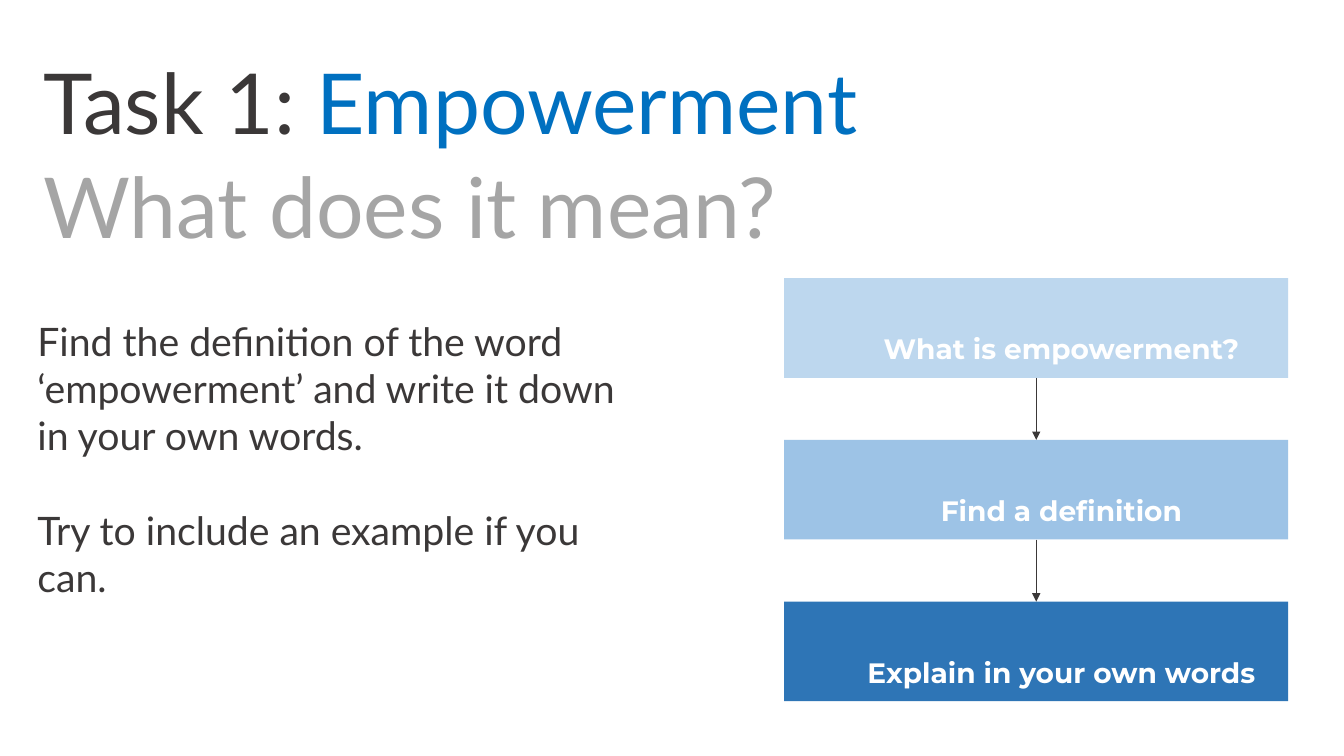
"""Build the empowerment task slide: two headings, instructions and a three-step flow."""
from lxml import etree
from pptx import Presentation
from pptx.dml.color import RGBColor
from pptx.enum import shapes, text
from pptx.oxml import ns
from pptx.util import Pt

COLOURS = {
    "ink": "3B3838", "blue": "0070C0", "grey": "A5A5A5", "white": "FFFFFF",
    "pale": "BDD7EE", "mid": "9DC3E6", "deep": "2E75B6",
}
HEADING = {"name": "Lato", "size": Pt(60)}
BODY = {"name": "Lato", "size": Pt(28)}
STEP = {"name": "Montserrat", "size": Pt(20), "bold": True}
MARGIN_LEFT = 23.76
STEP_LEFT, STEP_TOP, STEP_WIDTH, STEP_HEIGHT = 560.2, 198.7, 360, 71.2
STEP_PITCH = 115.5
STEPS = [
    ("What is empowerment?", "pale"),
    ("Find a definition", "mid"),
    ("Explain in your own words", "deep"),
]


def colour(key):
    """Return the named colour."""
    return RGBColor.from_string(COLOURS[key])


def apply(target, values):
    """Set every attribute in values on target."""
    for attribute, value in values.items():
        setattr(target, attribute, value)


def frame_format(inset_x, inset_y, anchor):
    """Return format values for a wrapped text frame."""
    return {
        "word_wrap": True, "vertical_anchor": anchor,
        "margin_left": Pt(inset_x), "margin_right": Pt(inset_x),
        "margin_top": Pt(inset_y), "margin_bottom": Pt(inset_y),
    }


def add_words(paragraph, words, font, key):
    """Append a formatted run to a paragraph."""
    run = paragraph.add_run()
    run.text = words
    apply(run.font, font)
    run.font.color.rgb = colour(key)


def add_heading(slide, top, parts):
    """Add one large heading line made of coloured parts."""
    box = slide.shapes.add_textbox(Pt(MARGIN_LEFT), Pt(top), Pt(828), Pt(104.4))
    apply(box.text_frame, frame_format(7.2, 3.6, text.MSO_ANCHOR.MIDDLE))
    line = box.text_frame.paragraphs[0]
    line.line_spacing = 0.9
    for words, key in parts:
        add_words(line, words, HEADING, key)


def add_instructions(slide, sentences):
    """Add the instructions, one spaced paragraph per sentence."""
    box = slide.shapes.add_textbox(Pt(MARGIN_LEFT), Pt(223.9), Pt(438.5), Pt(175.7))
    frame = box.text_frame
    apply(frame, frame_format(3, 3, text.MSO_ANCHOR.TOP))
    frame.auto_size = text.MSO_AUTO_SIZE.SHAPE_TO_FIT_TEXT
    for index, sentence in enumerate(sentences):
        paragraph = frame.add_paragraph() if index else frame.paragraphs[0]
        paragraph.space_before = Pt(33.6 if index else 0)
        add_words(paragraph, sentence, BODY, "ink")


def add_step(slide, top, label, fill):
    """Add one step of the flow."""
    step = slide.shapes.add_shape(
        shapes.MSO_SHAPE.RECTANGLE, Pt(STEP_LEFT), Pt(top), Pt(STEP_WIDTH), Pt(STEP_HEIGHT))
    step.shadow.inherit = False
    step.fill.solid()
    step.fill.fore_color.rgb = colour(fill)
    step.line.fill.background()
    apply(step.text_frame, frame_format(14.4, 14.4, text.MSO_ANCHOR.TOP))
    paragraph = step.text_frame.paragraphs[0]
    apply(paragraph, {"alignment": text.PP_ALIGN.CENTER, "line_spacing": 2.0})
    indents = paragraph._p.get_or_add_pPr()
    indents.set("marL", str(Pt(36)))
    indents.set("indent", "0")
    add_words(paragraph, label, STEP, "white")
    return step


def add_arrow(slide, upper, lower):
    """Join two steps with a downward arrow."""
    arrow = slide.shapes.add_connector(shapes.MSO_CONNECTOR.STRAIGHT, 0, 0, 0, 0)
    arrow.begin_connect(upper, 2)
    arrow.end_connect(lower, 0)
    arrow.line.width = Pt(0.5)
    arrow.line.color.rgb = colour("ink")
    etree.SubElement(arrow.line._get_or_add_ln(), ns.qn("a:tailEnd"), type="triangle")
    etree.SubElement(arrow._element.spPr, ns.qn("a:effectLst"))


def main():
    """Build and save the slide."""
    deck = Presentation()
    apply(deck, {"slide_width": Pt(960), "slide_height": Pt(540)})
    slide = deck.slides.add_slide(deck.slide_layouts[6])
    add_heading(slide, 24.5, [("Task 1: ", "ink"), ("Empowerment", "blue")])
    add_heading(slide, 98.6, [("What does it mean?", "grey")])
    add_instructions(slide, [
        "Find the definition of the word ‘empowerment’ and write it down in your own words.",
        "Try to include an example if you can.",
    ])
    flow = [add_step(slide, STEP_TOP + row * STEP_PITCH, label, fill)
            for row, (label, fill) in enumerate(STEPS)]
    for upper, lower in zip(flow, flow[1:]):
        add_arrow(slide, upper, lower)
    deck.save("out.pptx")


if __name__ == "__main__":
    main()
